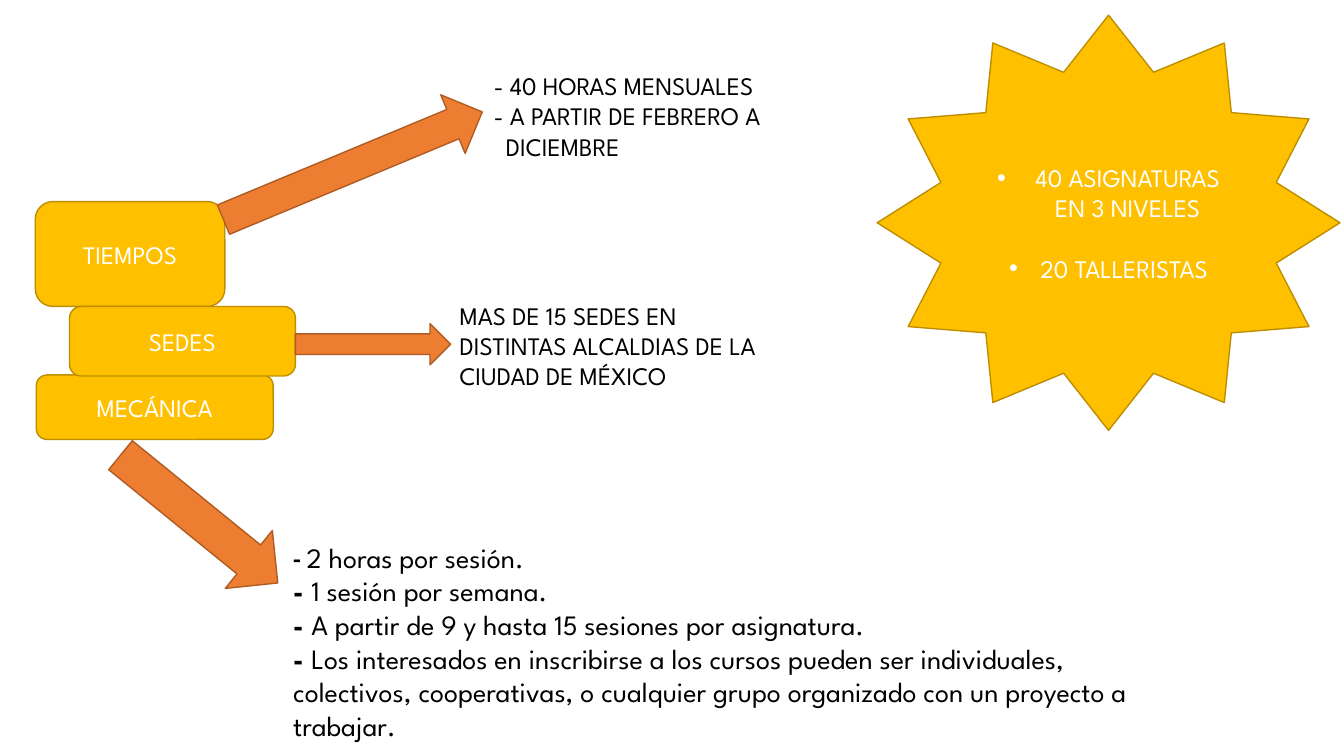
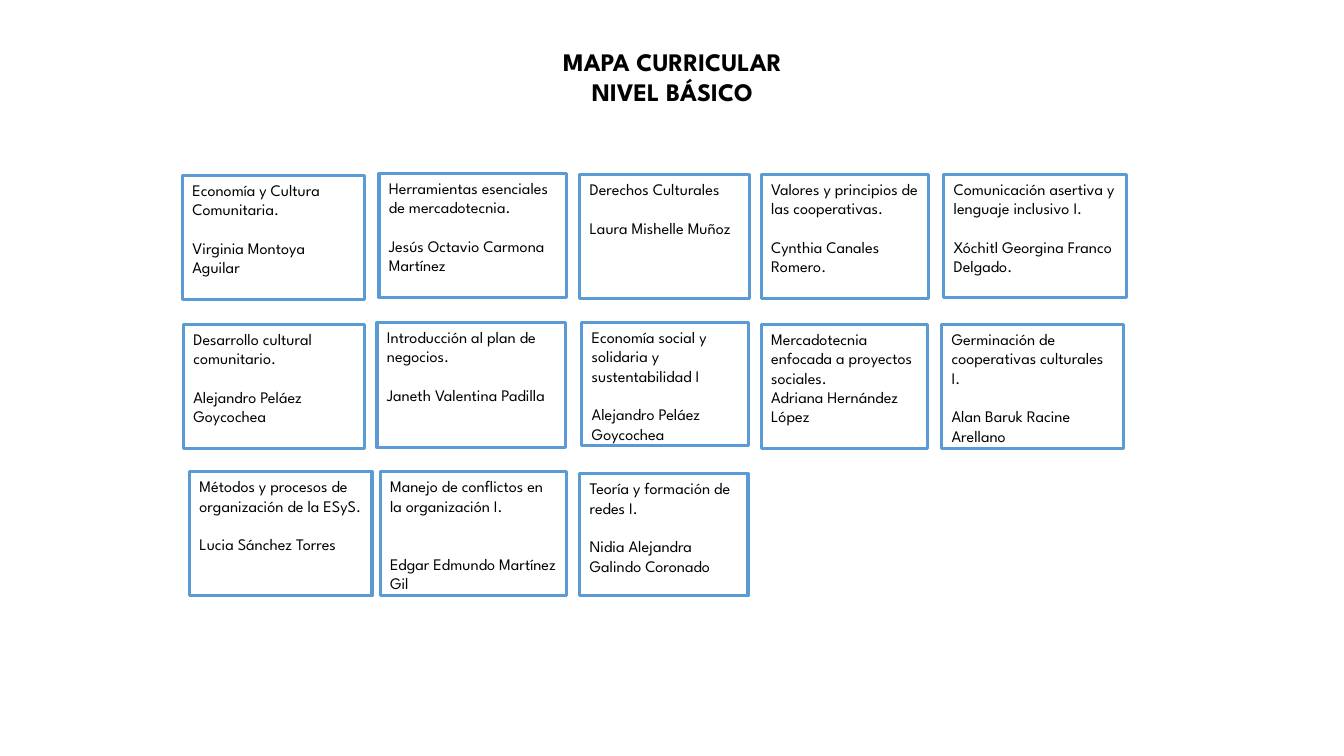
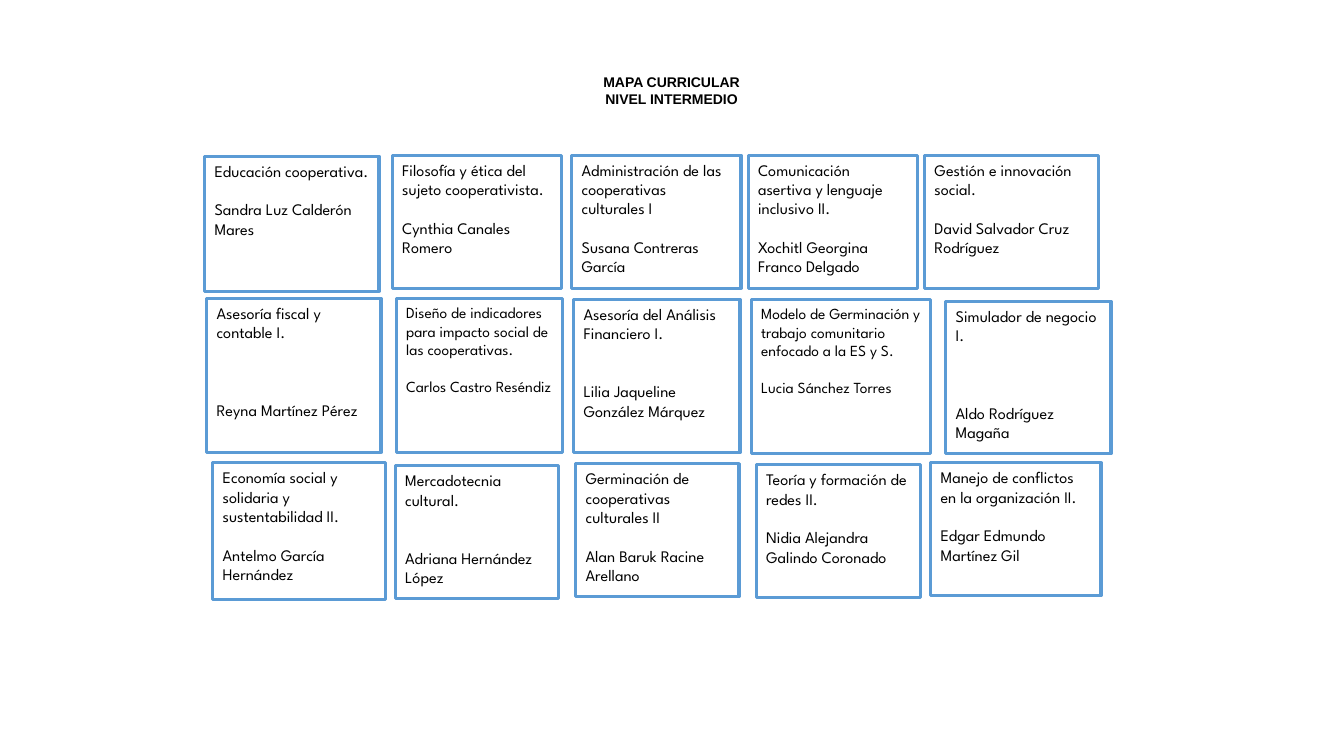
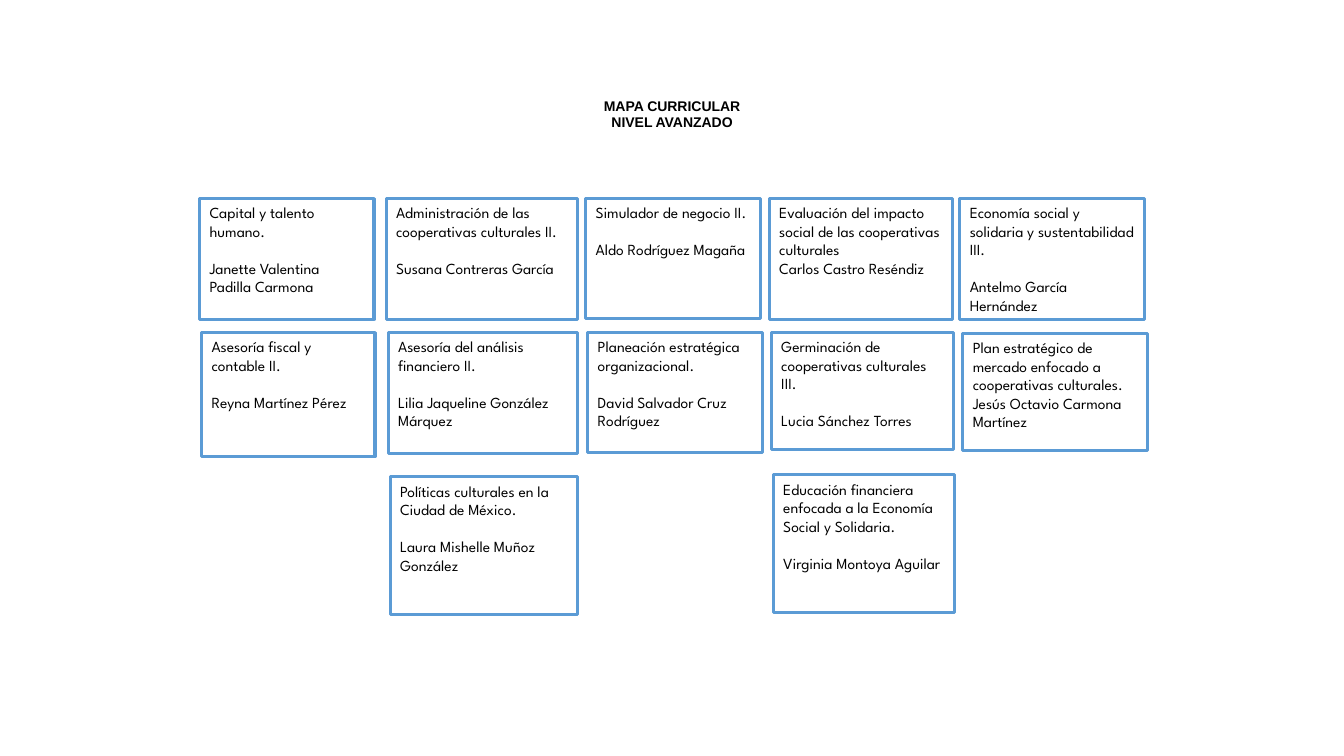
from lxml.etree import SubElement
from pptx import Presentation
from pptx.dml.color import RGBColor
from pptx.enum.shapes import MSO_SHAPE
from pptx.enum.text import MSO_ANCHOR, PP_ALIGN
from pptx.oxml.ns import qn
from pptx.util import Inches, Pt

COLORS = {
    "gold": "FFC000",
    "gold_line": "BD8E00",
    "orange": "ED7D31",
    "orange_line": "AF5C24",
    "blue_line": "5B9BD5",
    "white": "FFFFFF",
    "black": "000000",
}
FONT = "League Spartan"
LINE_HEIGHT = 1.2

deck = Presentation()
deck.slide_width = Inches(13.33)
deck.slide_height = Inches(7.5)
blank = deck.slide_layouts[6]


def add_box(page, kind, place, fill, line, line_width=1):
    box = page.shapes.add_shape(kind, *[Inches(length) for length in place])
    box.shadow.inherit = False
    box.fill.solid()
    box.fill.fore_color.rgb = RGBColor.from_string(COLORS[fill])
    box.line.color.rgb = RGBColor.from_string(COLORS[line])
    box.line.width = Pt(line_width)
    return box


def write(box, text, size, color, align, anchor, font=FONT, bold=False):
    """Fill the box with one paragraph for each line of text."""
    frame = box.text_frame
    frame.word_wrap = True
    frame.vertical_anchor = anchor
    frame.text = text
    for paragraph in frame.paragraphs:
        paragraph.alignment = align
        for span in paragraph.runs:
            span.font.size = Pt(size)
            span.font.name = font
            span.font.bold = bold
            span.font.color.rgb = RGBColor.from_string(COLORS[color])
    return frame.paragraphs


# Slide 1: schedule, venues and method
page = deck.slides.add_slide(blank)

for label, place in [
    ("TIEMPOS", (0.35, 2, 1.88, 1.04)),
    ("MECÁNICA", (0.36, 3.72, 2.35, 0.64)),
    ("SEDES", (0.69, 3.04, 2.24, 0.69)),
]:
    box = add_box(page, MSO_SHAPE.ROUNDED_RECTANGLE, place, "gold", "gold_line")
    write(box, label, 18, "white", PP_ALIGN.CENTER, MSO_ANCHOR.MIDDLE)

star = add_box(page, MSO_SHAPE.STAR_12_POINT, (8.7, 0.15, 4.59, 4.12), "gold", "gold_line")
bullets = write(star, "40 ASIGNATURAS EN 3 NIVELES\n20 TALLERISTAS", 18, "white",
                PP_ALIGN.CENTER, MSO_ANCHOR.MIDDLE)
bullets[1].space_before = Pt(18 * LINE_HEIGHT)
for paragraph, indent in zip(bullets, (0.38, 0.31)):
    properties = paragraph._p.get_or_add_pPr()
    properties.set("marL", str(Inches(indent)))
    properties.set("indent", str(-Inches(indent)))
    SubElement(properties, qn("a:buFont")).set("typeface", "Arial")
    SubElement(properties, qn("a:buChar")).set("char", "•")

details = []
for text, size, place in [
    ("- 40 HORAS MENSUALES\n- A PARTIR DE FEBRERO A DICIEMBRE", 18, (4.8, 0.65, 2.99, 1.62)),
    ("MAS DE 15 SEDES EN DISTINTAS ALCALDIAS DE LA CIUDAD DE MÉXICO", 18,
     (4.46, 2.93, 3.33, 1.31)),
    ("2 horas por sesión.\n1 sesión por semana.\n"
     "A partir de 9 y hasta 15 sesiones por asignatura.\n"
     "Los interesados en inscribirse a los cursos pueden ser individuales, colectivos, "
     "cooperativas, o cualquier grupo organizado con un proyecto a trabajar.", 20,
     (2.81, 5.31, 8.88, 2.42)),
]:
    box = page.shapes.add_textbox(*[Inches(length) for length in place])
    details.append(write(box, text, size, "black", PP_ALIGN.LEFT, MSO_ANCHOR.TOP))

months = details[0][1]._p.get_or_add_pPr()
months.set("marL", str(Inches(0.12)))
months.set("indent", str(-Inches(0.12)))

# The method list has bold dashes; the first one is in another font
for number, paragraph in enumerate(details[2]):
    sentence = paragraph.runs[0]
    rest = paragraph.add_run()
    rest.text = sentence.text
    sentence.text = "- "
    for span in paragraph.runs:
        span.font.size = Pt(20)
        span.font.name = FONT
        span.font.bold = span.text == "- "
        span.font.color.rgb = RGBColor.from_string(COLORS["black"])
    if number == 0:
        paragraph.runs[0].font.name = "Calibri"
        paragraph.runs[0].font.size = Pt(18)

for place, angle in [
    ((2.93, 3.21, 1.54, 0.41), 0),
    ((0.97, 4.78, 2.01, 0.74), 39.1),
    ((2.11, 1.33, 2.78, 0.63), 337.4),
]:
    arrow = add_box(page, MSO_SHAPE.RIGHT_ARROW, place, "orange", "orange_line")
    arrow.rotation = angle

# Slides 2 to 4: one curriculum map for each level.
# Card: left, top, width, height, subject, teacher, blank lines between, text size
basic_cards = [
    (1.81, 1.74, 1.81, 1.23, "Economía y Cultura Comunitaria.", "Virginia Montoya Aguilar", 1, 11.5),
    (3.76, 1.72, 1.86, 1.23, "Herramientas esenciales de mercadotecnia.",
     "Jesús Octavio Carmona Martínez", 1, 11.5),
    (5.75, 1.73, 1.68, 1.23, "Derechos Culturales", "Laura Mishelle Muñoz", 1, 11.5),
    (7.55, 1.73, 1.66, 1.23, "Valores y principios de las cooperativas.",
     "Cynthia Canales Romero.", 1, 11.5),
    (9.36, 1.73, 1.81, 1.22, "Comunicación asertiva y lenguaje inclusivo I.",
     "Xóchitl Georgina Franco Delgado.", 1, 11.5),
    (1.82, 3.22, 1.8, 1.23, "Desarrollo cultural comunitario.", "Alejandro Peláez Goycochea", 1, 11.5),
    (3.74, 3.2, 1.87, 1.24, "Introducción al plan de negocios.", "Janeth Valentina Padilla", 1, 11.5),
    (5.77, 3.2, 1.65, 1.22, "Economía social y solidaria y sustentabilidad I",
     "Alejandro Peláez Goycochea", 1, 11.5),
    (7.55, 3.22, 1.65, 1.23, "Mercadotecnia enfocada a proyectos sociales.",
     "Adriana Hernández López", 0, 11.5),
    (9.34, 3.22, 1.8, 1.23, "Germinación de cooperativas culturales I.",
     "Alan Baruk Racine Arellano", 1, 11.5),
    (1.88, 4.68, 1.81, 1.23, "Métodos y procesos de organización de la ESyS.",
     "Lucia Sánchez Torres", 1, 11.5),
    (3.77, 4.68, 1.85, 1.23, "Manejo de conflictos en la organización I.",
     "Edgar Edmundo Martínez Gil", 2, 11.5),
    (5.75, 4.7, 1.67, 1.21, "Teoría y formación de redes I.",
     "Nidia Alejandra Galindo Coronado", 1, 11.5),
]
middle_cards = [
    (2.03, 1.55, 1.73, 1.34, "Educación cooperativa.", "Sandra Luz Calderón Mares", 1, 11.5),
    (3.89, 1.54, 1.68, 1.32, "Filosofía y ética del sujeto cooperativista.",
     "Cynthia Canales Romero", 1, 11.5),
    (5.67, 1.54, 1.68, 1.32, "Administración de las cooperativas culturales I",
     "Susana Contreras García", 1, 11.5),
    (7.42, 1.54, 1.68, 1.32, "Comunicación asertiva y lenguaje inclusivo II.",
     "Xochitl Georgina Franco Delgado", 1, 11.5),
    (9.17, 1.54, 1.73, 1.32, "Gestión e innovación social.", "David Salvador Cruz Rodríguez", 1, 11.5),
    (2.05, 2.96, 1.73, 1.53, "Asesoría fiscal y contable I.", "Reyna Martínez Pérez", 3, 11.5),
    (3.93, 2.96, 1.65, 1.53, "Diseño de indicadores para impacto social de las cooperativas.",
     "Carlos Castro Reséndiz", 1, 11),
    (5.69, 2.97, 1.65, 1.52, "Asesoría del Análisis Financiero I.",
     "Lilia Jaqueline González Márquez", 2, 11.5),
    (7.45, 2.97, 1.78, 1.53, "Modelo de Germinación y trabajo comunitario enfocado a la ES y S.",
     "Lucia Sánchez Torres", 1, 11),
    (9.38, 2.99, 1.64, 1.51, "Simulador de negocio I.", "Aldo Rodríguez Magaña", 3, 11.5),
    (2.11, 4.59, 1.71, 1.36, "Economía social y solidaria y sustentabilidad II.",
     "Antelmo García Hernández", 1, 11.5),
    (3.92, 4.62, 1.62, 1.32, "Mercadotecnia cultural.", "Adriana Hernández López", 2, 11.5),
    (5.71, 4.6, 1.62, 1.32, "Germinación de cooperativas culturales II",
     "Alan Baruk Racine Arellano", 1, 11.5),
    (7.5, 4.61, 1.63, 1.32, "Teoría y formación de redes II.",
     "Nidia Alejandra Galindo Coronado", 1, 11.5),
    (9.23, 4.59, 1.69, 1.32, "Manejo de conflictos en la organización II.",
     "Edgar Edmundo Martínez Gil", 1, 11.5),
]
advanced_cards = [
    (1.98, 1.97, 1.73, 1.2, "Capital y talento humano.", "Janette Valentina Padilla Carmona", 1, 11),
    (3.83, 1.97, 1.9, 1.2, "Administración de las cooperativas culturales II.",
     "Susana Contreras García", 1, 11),
    (5.81, 1.97, 1.73, 1.19, "Simulador de negocio II.", "Aldo Rodríguez Magaña", 1, 11),
    (7.63, 1.97, 1.82, 1.2, "Evaluación del impacto social de las cooperativas culturales",
     "Carlos Castro Reséndiz", 0, 11),
    (9.52, 1.97, 1.83, 1.2, "Economía social y solidaria y sustentabilidad III.",
     "Antelmo García Hernández", 1, 11),
    (2, 3.3, 1.72, 1.23, "Asesoría fiscal y contable II.", "Reyna Martínez Pérez", 1, 11),
    (3.85, 3.3, 1.88, 1.2, "Asesoría del análisis financiero II.",
     "Lilia Jaqueline González Márquez", 1, 11),
    (5.83, 3.3, 1.73, 1.19, "Planeación estratégica organizacional.",
     "David Salvador Cruz Rodríguez", 1, 11),
    (7.65, 3.3, 1.81, 1.16, "Germinación de cooperativas culturales III.",
     "Lucia Sánchez Torres", 1, 11),
    (9.55, 3.31, 1.83, 1.16, "Plan estratégico de mercado enfocado a cooperativas culturales.",
     "Jesús Octavio Carmona Martínez", 0, 11),
    (3.87, 4.73, 1.86, 1.37, "Políticas culturales en la Ciudad de México.",
     "Laura Mishelle Muñoz González", 1, 11),
    (7.67, 4.71, 1.8, 1.37, "Educación financiera enfocada a la Economía Social y Solidaria.",
     "Virginia Montoya Aguilar", 1, 11),
]

# Level, title place, title font and size, top and bottom margins, cards
for level, place, font, title_size, margins, cards in [
    ("BÁSICO", (5.32, 0.4, 2.7, 0.71), FONT, 18, (0.05, 0.05), basic_cards),
    ("INTERMEDIO", (5.55, 0.68, 2.22, 0.74), "Arial", 10, (0.05, 0.35), middle_cards),
    ("AVANZADO", (5.49, 0.74, 2.35, 0.91), "Arial", 10, (0.22, 0.35), advanced_cards),
]:
    page = deck.slides.add_slide(blank)
    for left, top, width, height, subject, teacher, blank_lines, size in cards:
        card = add_box(page, MSO_SHAPE.RECTANGLE, (left, top, width, height),
                       "white", "blue_line", 2.25)
        paragraphs = write(card, f"{subject}\n{teacher}", size, "black",
                           PP_ALIGN.LEFT, MSO_ANCHOR.TOP)
        paragraphs[1].space_before = Pt(blank_lines * size * LINE_HEIGHT)
    title = page.shapes.add_textbox(*[Inches(length) for length in place])
    write(title, f"MAPA CURRICULAR\nNIVEL {level}", title_size, "black",
          PP_ALIGN.CENTER, MSO_ANCHOR.MIDDLE, font, True)
    title.text_frame.margin_top, title.text_frame.margin_bottom = map(Inches, margins)

deck.save("out.pptx")
